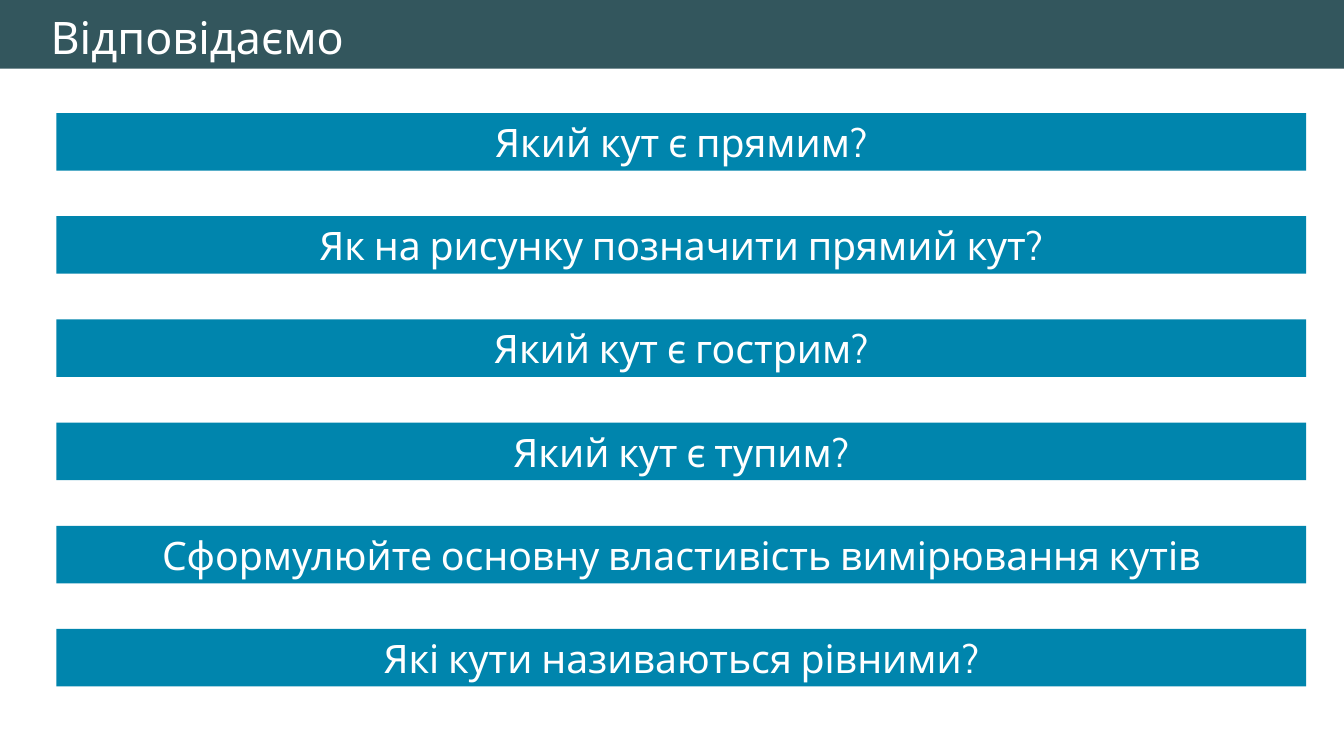
from dataclasses import dataclass

from pptx import Presentation
from pptx.dml.color import RGBColor
from pptx.enum.shapes import MSO_SHAPE
from pptx.enum.text import MSO_ANCHOR, MSO_AUTO_SIZE, PP_ALIGN
from pptx.shapes.autoshape import Shape
from pptx.slide import Slide
from pptx.util import Cm, Pt


@dataclass(frozen=True)
class Theme:
    font: str = "Cabin"
    header: RGBColor = RGBColor(0x33, 0x56, 0x5D)
    bar: RGBColor = RGBColor(0x00, 0x85, 0xAD)
    text: RGBColor = RGBColor(0xFF, 0xFF, 0xFF)
    title_size: int = 32
    question_size: int = 28


@dataclass(frozen=True)
class Box:
    left: float
    top: float
    width: float
    height: float


THEME = Theme()
HEADER = Box(0, 0, 33.87, 1.73)
TITLE = Box(1.02, 0.1, 31.45, 1.63)
FIRST_BAR = Box(1.42, 2.85, 31.5, 1.45)
BAR_PITCH = 2.6
QUESTIONS = [
    "Який кут є прямим?",
    "Як на рисунку позначити прямий кут?",
    "Який кут є гострим?",
    "Який кут є тупим?",
    "Сформулюйте основну властивість вимірювання кутів",
    "Які кути називаються рівними?",
]


def add_bar(s: Slide, box: Box, fill: RGBColor) -> Shape:
    sp = s.shapes.add_shape(
        MSO_SHAPE.RECTANGLE,
        Cm(box.left), Cm(box.top), Cm(box.width), Cm(box.height),
    )
    sp.shadow.inherit = False
    sp.fill.solid()
    sp.fill.fore_color.rgb = fill
    sp.line.fill.background()
    return sp


def write_text(sp: Shape, text: str, size: int, align: PP_ALIGN) -> None:
    tf = sp.text_frame
    tf.text = text
    tf.word_wrap = True
    tf.auto_size = MSO_AUTO_SIZE.NONE
    tf.vertical_anchor = MSO_ANCHOR.MIDDLE
    p = tf.paragraphs[0]
    p.alignment = align
    p.line_spacing = 1.0
    p.space_before = Pt(0)
    r = p.runs[0]
    r.font.name = THEME.font
    r.font.size = Pt(size)
    r.font.color.rgb = THEME.text


def add_title(s: Slide, text: str) -> None:
    title = s.shapes.title
    title.left, title.top = Cm(TITLE.left), Cm(TITLE.top)
    title.width, title.height = Cm(TITLE.width), Cm(TITLE.height)
    write_text(title, text, THEME.title_size, PP_ALIGN.LEFT)
    band = add_bar(s, HEADER, THEME.header)
    title._element.addprevious(band._element)


def add_question(s: Slide, index: int, text: str) -> None:
    top = FIRST_BAR.top + index * BAR_PITCH
    box = Box(FIRST_BAR.left, top, FIRST_BAR.width, FIRST_BAR.height)
    sp = add_bar(s, box, THEME.bar)
    write_text(sp, text, THEME.question_size, PP_ALIGN.CENTER)


def main() -> None:
    prs = Presentation()
    prs.slide_width, prs.slide_height = Cm(33.87), Cm(19.05)
    s = prs.slides.add_slide(prs.slide_layouts.get_by_name("Title Only"))
    add_title(s, "Відповідаємо")
    for index, question in enumerate(QUESTIONS):
        add_question(s, index, question)
    prs.save("out.pptx")


if __name__ == "__main__":
    main()
